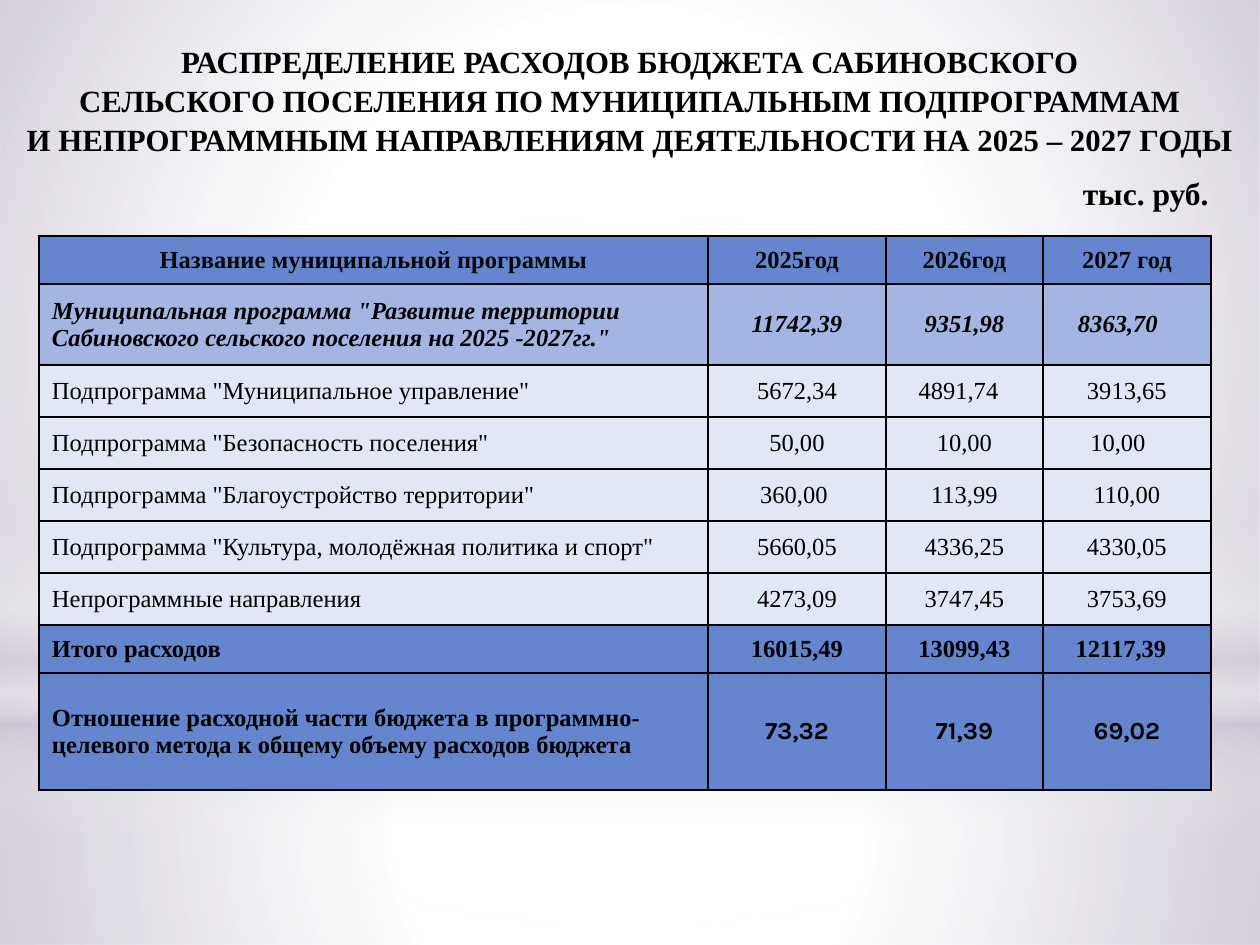
from dataclasses import dataclass

from lxml.etree import SubElement
from pptx import Presentation
from pptx.dml.color import RGBColor
from pptx.enum.shapes import MSO_SHAPE as Shape
from pptx.enum.text import MSO_ANCHOR as Anchor, MSO_AUTO_SIZE as AutoSize, PP_ALIGN as Align
from pptx.oxml.ns import qn
from pptx.util import Emu, Pt

EMU_PER_PX = 914400 / 126
SERIF, SANS = "Times New Roman", "Karla"
BLACK = RGBColor(0x00, 0x00, 0x00)
INK = RGBColor(0x08, 0x08, 0x08)
WHITE = RGBColor(0xFF, 0xFF, 0xFF)
LILAC = RGBColor(0xC9, 0xC2, 0xD1)
BLUE = RGBColor(0x65, 0x85, 0xCF)
MID_BLUE = RGBColor(0xA3, 0xB6, 0xE2)
PALE_BLUE = RGBColor(0xE0, 0xE7, 0xF5)


@dataclass(frozen=True)
class Glow:
    kind: Shape
    top: int
    height: int
    stops: tuple
    radial: bool = True


@dataclass(frozen=True)
class Style:
    fill: RGBColor
    color: RGBColor = BLACK
    bold: bool = False
    italic: bool = False
    value_font: str = SERIF
    side_inset: int = 13


@dataclass(frozen=True)
class Row:
    height: int
    style: Style
    label: str
    values: tuple
    nudges: tuple = (0, 0, 0)


GLOWS = (
    Glow(Shape.RECTANGLE, 703, 242, ((0, WHITE, 91), (37, WHITE, 76), (100, LILAC, 79))),
    Glow(Shape.RECTANGLE, 0, 703, ((0, WHITE, 89), (48, WHITE, 62), (100, LILAC, 79))),
    Glow(Shape.RECTANGLE, 519, 315, ((0, WHITE, 0), (29, WHITE, 30), (45, LILAC, 40),
                                     (55, WHITE, 26), (65, LILAC, 60), (100, WHITE, 0)), False),
    Glow(Shape.OVAL, 220, 703, ((0, WHITE, 100), (56, WHITE, 0))),
)

HEADER = Style(BLUE, INK, bold=True, side_inset=6)
PROGRAMME = Style(MID_BLUE, bold=True, italic=True)
SUBPROGRAMME = Style(PALE_BLUE)
TOTAL = Style(BLUE, bold=True)
RATIO = Style(BLUE, bold=True, value_font=SANS)

COLUMN_WIDTHS = (669, 178, 157, 168)
ROWS = (
    Row(48, HEADER, "Название муниципальной программы", ("2025год", "2026год", "2027 год")),
    Row(81, PROGRAMME, 'Муниципальная программа "Развитие территории Сабиновского сельского '
        'поселения на 2025 -2027гг."', ("11742,39", "9351,98", "8363,70"), (0, 0, 18)),
    Row(52, SUBPROGRAMME, 'Подпрограмма "Муниципальное управление"',
        ("5672,34", "4891,74", "3913,65"), (0, 12, 0)),
    Row(52, SUBPROGRAMME, 'Подпрограмма "Безопасность поселения"',
        ("50,00", "10,00", "10,00"), (0, 0, 18)),
    Row(52, SUBPROGRAMME, 'Подпрограмма "Благоустройство территории"',
        ("360,00", "113,99", "110,00"), (6, 0, 0)),
    Row(52, SUBPROGRAMME, 'Подпрограмма "Культура, молодёжная политика и спорт"',
        ("5660,05", "4336,25", "4330,05")),
    Row(52, SUBPROGRAMME, "Непрограммные направления", ("4273,09", "3747,45", "3753,69")),
    Row(48, TOTAL, "Итого расходов", ("16015,49", "13099,43", "12117,39"), (0, 0, 12)),
    Row(117, RATIO, "Отношение расходной части бюджета в программно-целевого метода "
        "к общему объему расходов бюджета", ("73,32", "71,39", "69,02")),
)
TITLE = ("РАСПРЕДЕЛЕНИЕ РАСХОДОВ БЮДЖЕТА САБИНОВСКОГО\n"
         "СЕЛЬСКОГО ПОСЕЛЕНИЯ ПО МУНИЦИПАЛЬНЫМ ПОДПРОГРАММАМ\n"
         "И НЕПРОГРАММНЫМ НАПРАВЛЕНИЯМ ДЕЯТЕЛЬНОСТИ НА 2025 – 2027 ГОДЫ")


def px(count: int) -> Emu:
    """Turn pixels into EMU."""
    return Emu(round(count * EMU_PER_PX))


def format_text(frame, align: Align, size: float, color: RGBColor, bold: bool = True,
                italic: bool = False, font: str = SERIF) -> None:
    """Give every paragraph and run of a frame the same look."""
    for para in frame.paragraphs:
        para.alignment = align
        for span in para.runs:
            span.font.name, span.font.size = font, Pt(size)
            span.font.bold, span.font.italic = bold, italic
            span.font.color.rgb = color


def draw_glow(page, glow: Glow) -> None:
    """Draw a full-width band with a translucent gradient."""
    shape = page.shapes.add_shape(glow.kind, 0, px(glow.top), px(1260), px(glow.height))
    shape.shadow.inherit = False
    shape.line.fill.background()
    shape.fill.background()
    properties = shape.element.spPr
    blank = properties.find(qn("a:noFill"))
    gradient = SubElement(properties, qn("a:gradFill"), rotWithShape="1")
    properties.replace(blank, gradient)
    stops = SubElement(gradient, qn("a:gsLst"))
    for position, color, opacity in glow.stops:
        stop = SubElement(stops, qn("a:gs"), pos=str(position * 1000))
        tint = SubElement(stop, qn("a:srgbClr"), val=str(color))
        SubElement(tint, qn("a:alpha"), val=str(opacity * 1000))
    if glow.radial:
        focus = SubElement(gradient, qn("a:path"), path="circle")
        SubElement(focus, qn("a:fillToRect"), {side: "50000" for side in "ltrb"})
    else:
        SubElement(gradient, qn("a:lin"), ang="5400000", scaled="0")


def add_borders(cell) -> None:
    """Outline a cell with thin black lines."""
    properties = cell._tc.get_or_add_tcPr()
    for side in ("lnL", "lnR", "lnT", "lnB"):
        line = SubElement(properties, qn(f"a:{side}"), w=str(Pt(1)))
        fill = SubElement(line, qn("a:solidFill"))
        SubElement(fill, qn("a:srgbClr"), val=str(BLACK))


def fill_cell(cell, text: str, style: Style, align: Align, font: str, nudge: int) -> None:
    """Write and format one table cell."""
    add_borders(cell)
    cell.fill.solid()
    cell.fill.fore_color.rgb = style.fill
    cell.vertical_anchor = Anchor.MIDDLE
    cell.margin_left, cell.margin_right = px(style.side_inset), px(style.side_inset + nudge)
    cell.margin_top = cell.margin_bottom = px(6)
    cell.text_frame.text = text
    format_text(cell.text_frame, align, 14, style.color, style.bold, style.italic, font)


def draw_table(page) -> None:
    """Draw the budget table."""
    heights = [row.height for row in ROWS]
    table = page.shapes.add_table(len(ROWS), len(COLUMN_WIDTHS), px(39), px(236),
                                  px(sum(COLUMN_WIDTHS)), px(sum(heights))).table
    for column, width in zip(table.columns, COLUMN_WIDTHS):
        column.width = px(width)
    for index, row in enumerate(ROWS):
        table.rows[index].height = px(row.height)
        label_align = Align.CENTER if row.style is HEADER else Align.LEFT
        fill_cell(table.cell(index, 0), row.label, row.style, label_align, SERIF, 0)
        for column, (value, nudge) in enumerate(zip(row.values, row.nudges), 1):
            fill_cell(table.cell(index, column), value, row.style, Align.CENTER,
                      row.style.value_font, nudge)


def draw_unit(page) -> None:
    """Write the unit of measure above the table."""
    box = page.shapes.add_textbox(px(1053), px(168), px(168), px(50))
    box.text_frame.word_wrap = True
    box.text_frame.text = "тыс. руб."
    format_text(box.text_frame, Align.RIGHT, 18, BLACK)


def draw_title(page) -> None:
    """Place the title in front of the background bands."""
    title = page.shapes.title
    title.left, title.top, title.width, title.height = px(0), px(20), px(1260), px(158)
    frame = title.text_frame
    frame.text = TITLE
    frame.word_wrap = True
    frame.auto_size = AutoSize.NONE
    frame.vertical_anchor = Anchor.MIDDLE
    format_text(frame, Align.CENTER, 17.6, BLACK)
    for para in frame.paragraphs:
        para.line_spacing = 1.05
    page.shapes.element.append(title.element)


def main() -> None:
    """Build the budget slide."""
    deck = Presentation()
    deck.slide_width, deck.slide_height = px(1260), px(945)
    page = deck.slides.add_slide(deck.slide_layouts[5])
    page.background.fill.solid()
    page.background.fill.fore_color.rgb = WHITE
    for glow in GLOWS:
        draw_glow(page, glow)
    draw_table(page)
    draw_unit(page)
    draw_title(page)
    deck.save("out.pptx")


if __name__ == "__main__":
    main()
